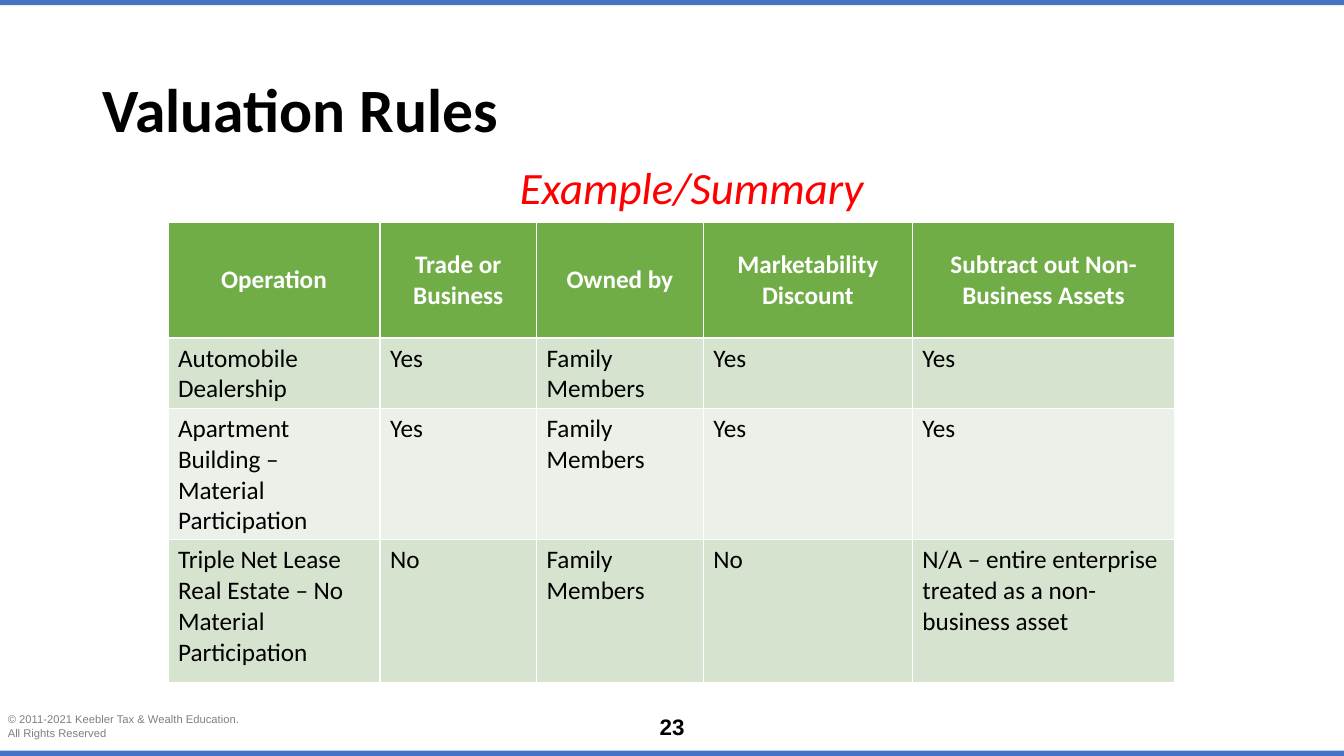
from pptx import Presentation
from pptx.dml.color import RGBColor
from pptx.enum.shapes import MSO_SHAPE
from pptx.enum.text import MSO_ANCHOR, PP_ALIGN
from pptx.util import Emu, Pt

RECT = MSO_SHAPE.RECTANGLE
TOP, MIDDLE = MSO_ANCHOR.TOP, MSO_ANCHOR.MIDDLE
LEFT, CENTER = PP_ALIGN.LEFT, PP_ALIGN.CENTER

PX = 9525  # 96 px to the inch
WIDE, HIGH = 1280, 720
COLORS = {
    "black": "000000",
    "white": "FFFFFF",
    "gray": "7F7F7F",
    "red": "FF0000",
    "blue": "4472C4",
    "green": "70AD47",
    "dark band": "D5E3CF",
    "light band": "EBF1E9",
}
COLS = [202, 149, 159, 199, 250]
ROWS = [110, 60, 110, 136]
RULES = [
    ["Operation", "Trade or Business", "Owned by", "Marketability\nDiscount",
     "Subtract out Non-Business Assets"],
    ["Automobile Dealership", "Yes", "Family Members", "Yes", "Yes"],
    ["Apartment Building – Material Participation", "Yes", "Family Members", "Yes", "Yes"],
    ["Triple Net Lease Real Estate – No Material Participation", "No", "Family Members", "No",
     "N/A – entire enterprise treated as a non-business asset"],
]


def px(*sizes):
    return [Emu(size * PX) for size in sizes]


def color(name):
    return RGBColor.from_string(COLORS[name])


def paint(shape, name):
    shape.fill.solid()
    shape.fill.fore_color.rgb = color(name)


def style(frame, size, tint, face="Calibri", bold=False, italic=False, align=LEFT):
    for line in frame.paragraphs:
        line.alignment = align
        font = line.font
        font.name, font.size = face, Pt(size)
        font.bold, font.italic = bold, italic
        font.color.rgb = color(tint)


def add_title(slide, text, box):
    title = slide.shapes.title
    title.left, title.top, title.width, title.height = px(*box)
    frame = title.text_frame
    frame.text = text
    frame.vertical_anchor = MIDDLE
    style(frame, 44, "black", bold=True)
    frame.paragraphs[0].line_spacing = 0.9


def add_text(slide, text, box, size, tint, wrap=True, anchor=TOP, **look):
    frame = slide.shapes.add_textbox(*px(*box)).text_frame
    frame.word_wrap = wrap
    frame.vertical_anchor = anchor
    frame.text = text
    style(frame, size, tint, **look)


def add_bar(slide, top, height):
    bar = slide.shapes.add_shape(RECT, *px(0, top, WIDE, height))
    bar.shadow.inherit = False
    paint(bar, "blue")
    bar.line.fill.background()


def add_rules(slide, left, top):
    """Add the table of rules; white borders come from its table style."""
    box = px(left, top, sum(COLS), sum(ROWS))
    table = slide.shapes.add_table(len(ROWS), len(COLS), *box).table
    for col, width in zip(table.columns, px(*COLS)):
        col.width = width
    for i, (row, height) in enumerate(zip(table.rows, px(*ROWS))):
        row.height = height
        for cell, text in zip(row.cells, RULES[i]):
            cell.text = text
            if i == 0:
                paint(cell, "green")
                cell.vertical_anchor = MIDDLE
                style(cell.text_frame, 18, "white", bold=True, align=CENTER)
            else:
                paint(cell, "dark band" if i % 2 else "light band")
                style(cell.text_frame, 18, "black")


def main():
    deck = Presentation()
    deck.slide_width, deck.slide_height = px(WIDE, HIGH)
    slide = deck.slides.add_slide(deck.slide_layouts[5])

    add_text(slide, "© 2011-2021 Keebler Tax & Wealth Education.\nAll Rights Reserved",
             (-2, 674, 245, 35), 8, "gray", wrap=False, face="Arial")
    add_text(slide, "23", (604, 674, 72, 35), 16, "black",
             face="Arial", bold=True, align=CENTER)
    for top in (0, HIGH - 5):
        add_bar(slide, top, 5)

    add_title(slide, "Valuation Rules", (88, 38, 1104, 139))
    add_text(slide, "Example/Summary", (227, 146, 864, 64), 32, "red",
             anchor=MIDDLE, italic=True, align=CENTER)
    add_rules(slide, 160, 212)
    deck.save("out.pptx")


if __name__ == "__main__":
    main()
